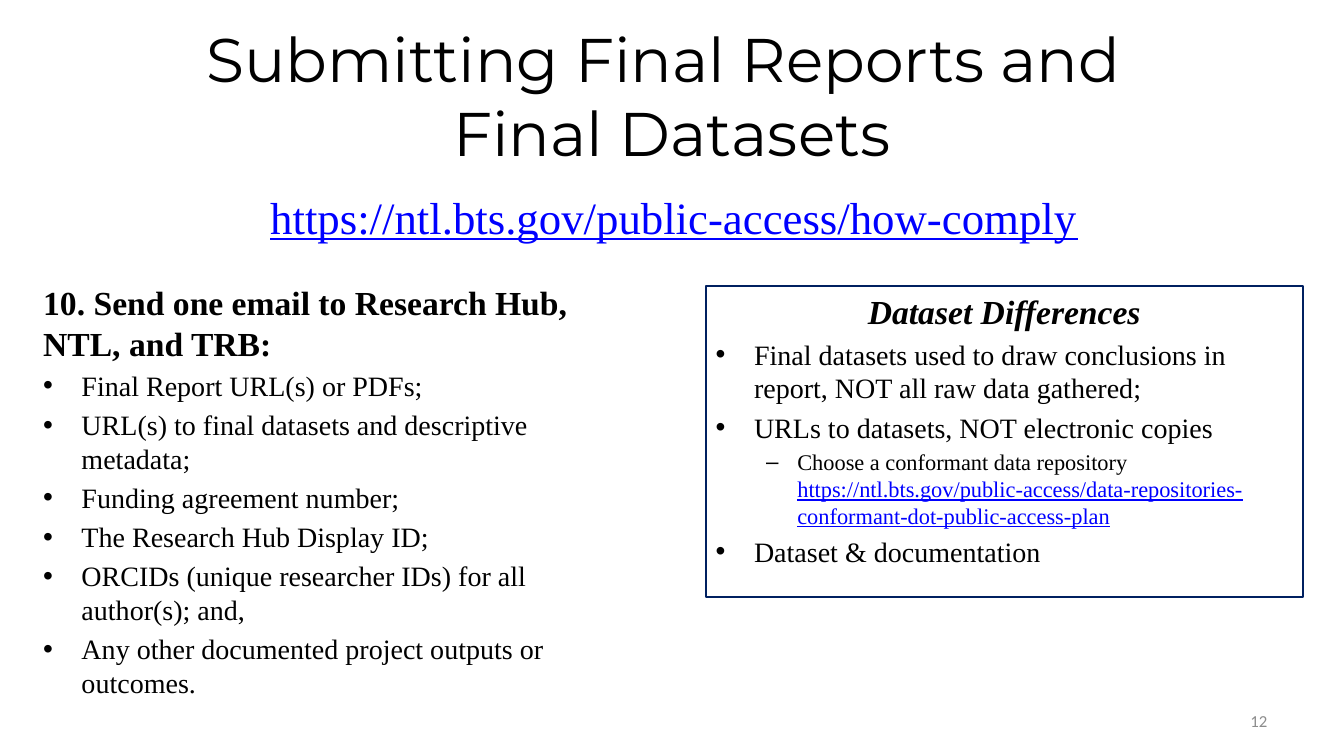
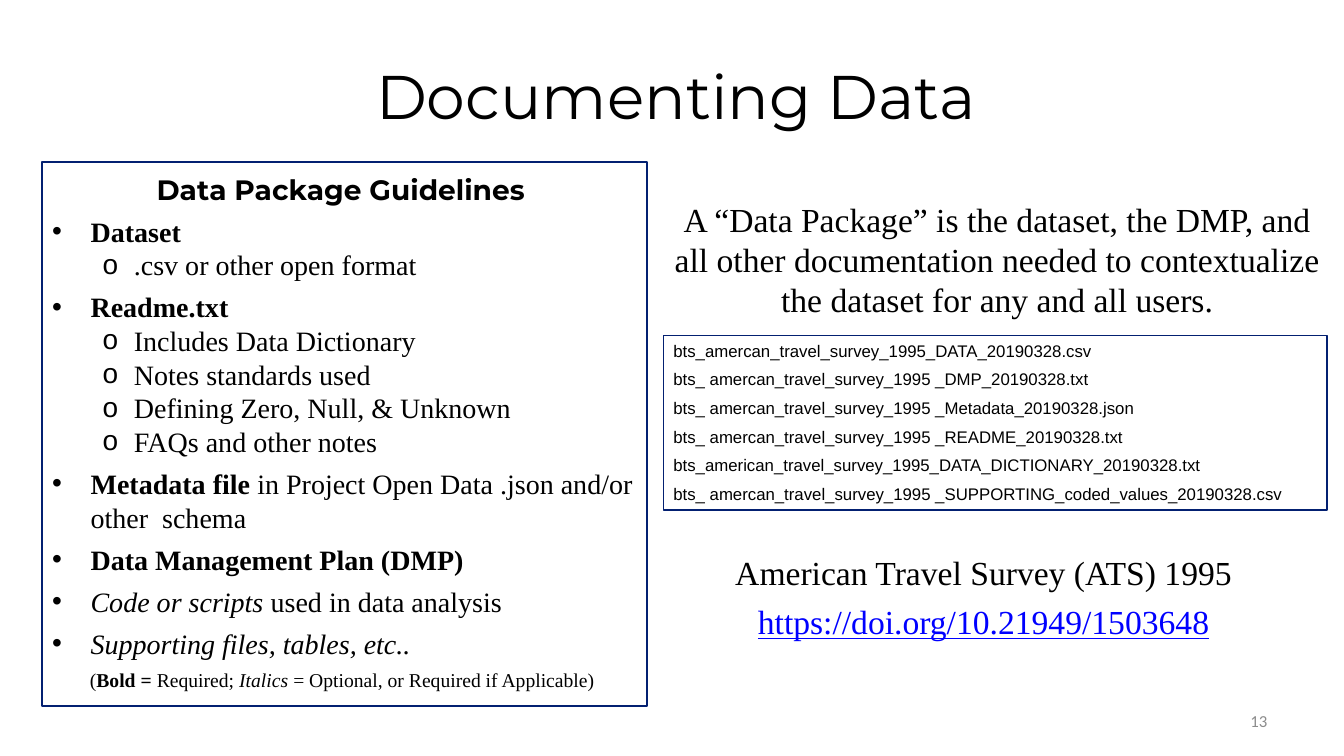
from dataclasses import dataclass
from typing import Optional

from lxml import etree
from pptx import Presentation
from pptx.dml.color import RGBColor
from pptx.enum.shapes import MSO_SHAPE as Shape
from pptx.enum.text import MSO_ANCHOR as Anchor, PP_ALIGN as Align
from pptx.oxml.ns import qn
from pptx.util import Inches, Pt


class Theme:
    TEXT = RGBColor(0x00, 0x00, 0x00)
    PAPER = RGBColor(0xFF, 0xFF, 0xFF)
    LINK = RGBColor(0x00, 0x00, 0xFF)
    NUMBER = RGBColor(0x8C, 0x8C, 0x8C)
    NAVY = RGBColor(0x00, 0x20, 0x60)
    BLUE = RGBColor(0x03, 0x20, 0x71)
    HEADING, BODY, FILES, FOOTER = "Montserrat", "Times New Roman", "Arial", "Calibri"
    TITLE, BANNER, LEAD, ITEM, DETAIL, NOTE, SMALL = 44, 32, 24, 20, 16, 14, 12


@dataclass(frozen=True)
class Style:
    size: int
    font: str = Theme.BODY
    color: RGBColor = Theme.TEXT
    align: Align = Align.LEFT
    bold: bool = False
    italic: bool = False
    bullet: str = ""
    level: int = 0
    before: float = 0
    after: float = 0
    line: Optional[float] = None


INDENTS = [(0.38, 0.38), (0.81, 0.31)]  # left margin and hang per level

STYLES = {
    "title": Style(Theme.TITLE, Theme.HEADING, align=Align.CENTER),
    "number": Style(Theme.SMALL, Theme.FOOTER, Theme.NUMBER, Align.RIGHT),
    "banner": Style(Theme.BANNER, align=Align.CENTER),
    "lead": Style(Theme.LEAD, bold=True),
    "box title": Style(Theme.LEAD, align=Align.CENTER, bold=True, italic=True),
    "item": Style(Theme.ITEM, bullet="•", before=4),
    "detail": Style(Theme.DETAIL, bullet="–", level=1, before=3.2),
    "guide title": Style(Theme.ITEM, Theme.HEADING, align=Align.CENTER, bold=True, line=1.15),
    "guide": Style(Theme.ITEM, bullet="•", before=6),
    "guide detail": Style(Theme.ITEM, bullet="o", level=1),
    "note": Style(Theme.NOTE, align=Align.CENTER, before=6),
    "statement": Style(Theme.LEAD, align=Align.CENTER, after=6),
    "file": Style(Theme.SMALL, Theme.FILES, after=6),
}

# A paragraph is (style, text) or (style, [(text, emphasis), ...]).
SLIDES = [
    {
        "number": "12",
        "title": "Submitting Final Reports and \vFinal Datasets",
        "title box": (0, 0.11, 13.33, 1.66),
        "blocks": [
            {"box": (1.13, 1.83, 11.11, 0.68), "filled": True, "text": [
                ("banner", [("https://ntl.bts.gov/public-access/how-comply", "link")]),
            ]},
            {"box": (0.33, 2.75, 5.92, 4.42), "filled": True, "text": [
                ("lead", "10. Send one email to Research Hub, NTL, and TRB:"),
                ("item", "Final Report URL(s) or PDFs;"),
                ("item", "URL(s) to final datasets and descriptive metadata;"),
                ("item", "Funding agreement number;"),
                ("item", "The Research Hub Display ID;"),
                ("item", "ORCIDs (unique researcher IDs) for all author(s); and,"),
                ("item", "Any other documented project outputs or outcomes."),
            ]},
            {"box": (7, 2.84, 5.92, 3.08), "filled": True, "border": (Theme.NAVY, 1.5), "text": [
                ("box title", "Dataset Differences"),
                ("item", "Final datasets used to draw conclusions in report, "
                         "NOT all raw data gathered;"),
                ("item", "URLs to datasets, NOT electronic copies"),
                ("detail", [
                    ("Choose a conformant data repository ", ""),
                    ("https://ntl.bts.gov/public-access/"
                     "data-repositories-conformant-dot-public-access-plan", "link"),
                    (" ", ""),
                ]),
                ("item", "Dataset & documentation"),
            ]},
        ],
    },
    {
        "number": "13",
        "title": "Documenting Data",
        "title box": (0.71, 0.32, 12, 1.25),
        "blocks": [
            {"box": (0.42, 1.61, 6, 5.39), "filled": True, "border": (Theme.BLUE, 1.5), "text": [
                ("guide title", "Data Package Guidelines "),
                ("guide", [("Dataset", "bold")]),
                ("guide detail", ".csv or other open format"),
                ("guide", [("Readme.txt", "bold")]),
                ("guide detail", "Includes Data Dictionary"),
                ("guide detail", "Notes standards used"),
                ("guide detail", "Defining Zero, Null, & Unknown"),
                ("guide detail", "FAQs and other notes"),
                ("guide", [("Metadata file ", "bold"),
                           ("in Project Open Data .json and/or other  schema", "")]),
                ("guide", [("Data Management Plan (DMP)", "bold")]),
                ("guide", [("Code or scripts ", "italic"), ("used in data analysis", "")]),
                ("guide", [("Supporting files, tables, etc..", "italic")]),
                ("note", [("(", ""), ("Bold = ", "bold"), ("Required; ", ""),
                          ("Italics ", "italic"),
                          ("= Optional, or Required if Applicable) ", "")]),
            ]},
            {"box": (6.53, 1.92, 6.72, 1.51), "text": [
                ("statement", "A “Data Package” is the dataset, the DMP, and all other "
                              "documentation needed to contextualize the dataset "
                              "for any and all users."),
            ]},
            {"box": (6.58, 3.33, 6.58, 1.73), "border": (Theme.BLUE, 1.25), "text": [
                ("file", "bts_amercan_travel_survey_1995_DATA_20190328.csv"),
                ("file", "bts_ amercan_travel_survey_1995 _DMP_20190328.txt"),
                ("file", "bts_ amercan_travel_survey_1995 _Metadata_20190328.json"),
                ("file", "bts_ amercan_travel_survey_1995 _README_20190328.txt"),
                ("file", "bts_american_travel_survey_1995_DATA_DICTIONARY_20190328.txt"),
                ("file", "bts_ amercan_travel_survey_1995 "
                         "_SUPPORTING_coded_values_20190328.csv"),
            ]},
            {"box": (7.17, 5.43, 5.17, 0.99), "text": [
                ("statement", "American Travel Survey (ATS) 1995"),
                ("statement", [("https://doi.org/10.21949/1503648", "link")]),
            ]},
        ],
    },
]

NUMBER_BOX = (12.11, 6.95, 0.56, 0.4)


def add_bullet(paragraph, style):
    left, hang = INDENTS[style.level]
    properties = paragraph._p.get_or_add_pPr()
    properties.set("marL", str(Inches(left)))
    properties.set("indent", str(-Inches(hang)))
    etree.SubElement(properties, qn("a:buFont")).set("typeface", Theme.FILES)
    etree.SubElement(properties, qn("a:buChar")).set("char", style.bullet)


def format_paragraph(paragraph, style, is_first):
    paragraph.alignment = style.align
    paragraph.level = style.level
    paragraph.space_before = Pt(0 if is_first else style.before)
    paragraph.space_after = Pt(style.after)
    if style.line:
        paragraph.line_spacing = style.line
    if style.bullet:
        add_bullet(paragraph, style)
    font = paragraph.font
    font.name, font.size = style.font, Pt(style.size)
    font.bold, font.italic = style.bold, style.italic
    font.color.rgb = style.color


def add_emphasized_run(paragraph, text, emphasis):
    run = paragraph.add_run()
    run.text = text
    if emphasis == "bold":
        run.font.bold = True
    elif emphasis == "italic":
        run.font.italic = True
    elif emphasis == "link":
        run.font.underline = True
        run.font.color.rgb = Theme.LINK


def add_panel(slide, position, filled, border):
    panel = slide.shapes.add_shape(Shape.RECTANGLE, *position)
    panel.shadow.inherit = False
    if filled:
        panel.fill.solid()
        panel.fill.fore_color.rgb = Theme.PAPER
    else:
        panel.fill.background()
    if border:
        color, width = border
        panel.line.color.rgb = color
        panel.line.width = Pt(width)
    else:
        panel.line.fill.background()
    return panel


def add_text(slide, box, text, filled=False, border=None, anchor=Anchor.TOP):
    """Add a text block, on a rectangle when it is filled or has a border."""
    position = [Inches(length) for length in box]
    if filled or border:
        shape = add_panel(slide, position, filled, border)
    else:
        shape = slide.shapes.add_textbox(*position)
    frame = shape.text_frame
    frame.word_wrap = True
    frame.vertical_anchor = anchor
    for index, (style_name, content) in enumerate(text):
        paragraph = frame.add_paragraph() if index else frame.paragraphs[0]
        format_paragraph(paragraph, STYLES[style_name], index == 0)
        if isinstance(content, str):
            paragraph.text = content
        else:
            for run_text, emphasis in content:
                add_emphasized_run(paragraph, run_text, emphasis)


def build_slide(presentation, content):
    slide = presentation.slides.add_slide(presentation.slide_layouts[6])
    add_text(slide, content["title box"], [("title", content["title"])], anchor=Anchor.MIDDLE)
    for block in content["blocks"]:
        add_text(slide, **block)
    add_text(slide, NUMBER_BOX, [("number", content["number"])], anchor=Anchor.MIDDLE)


def main():
    presentation = Presentation()
    presentation.slide_width = Inches(13.33)
    presentation.slide_height = Inches(7.5)
    for content in SLIDES:
        build_slide(presentation, content)
    presentation.save("out.pptx")


if __name__ == "__main__":
    main()
